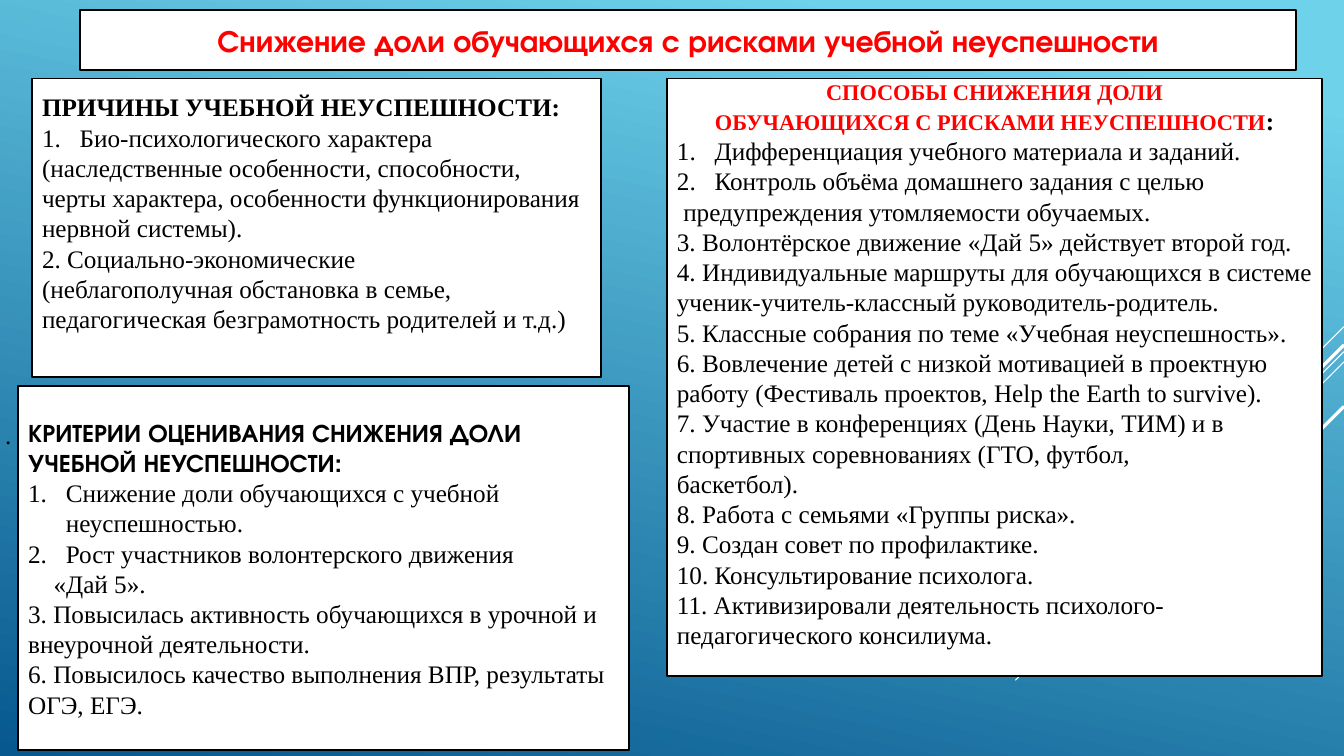
import pptx
import pptx.dml.color
import pptx.enum.shapes
import pptx.enum.text
import pptx.oxml
import pptx.util
from dataclasses import dataclass
from lxml import etree
from pptx.oxml.ns import qn

Cm = pptx.util.Cm
Pt = pptx.util.Pt
Align = pptx.enum.text.PP_ALIGN
Anchor = pptx.enum.text.MSO_ANCHOR


@dataclass(frozen=True)
class Theme:
    sky: str = "6ED2EB"
    sea: str = "06588E"
    paper: str = "FFFFFF"
    ink: str = "000000"
    accent: str = "FF0000"
    title_size: float = 22
    body_size: float = 18
    small_size: float = 16
    line_pitch: float = 21.6
    border: float = 1.25
    serif: str = "Times New Roman"
    display: str = "TeX Gyre Adventor"


THEME = Theme()
SLIDE_WIDTH, SLIDE_HEIGHT = 33.87, 19.05
LIST_INDENT = 0.95

# Start height at the right edge, run to the lower left, line width
RAYS = [(8.23, 2.54, 0.75), (8.86, 8.28, 0.75), (9.12, 5.27, 0.75),
        (8.69, 4.85, 2.25), (10.24, 3.53, 2.25)]

NUMBERED = {"numbered": True}
CAUSES = [
    ("Био-психологического характера", NUMBERED),
    ("(наследственные особенности, способности,", {}),
    ("черты характера, особенности функционирования", {}),
    ("нервной системы).", {}),
    ("2. Социально-экономические", {}),
    ("(неблагополучная обстановка в семье,", {}),
    ("педагогическая безграмотность родителей и т.д.)", {}),
]
METHODS = [
    ("Дифференциация учебного материала и заданий.", NUMBERED),
    ("Контроль объёма домашнего задания с целью", NUMBERED),
    ("предупреждения утомляемости обучаемых.", {"indent": 0.16}),
    ("3. Волонтёрское движение «Дай 5» действует второй год.", {}),
    ("4. Индивидуальные маршруты для обучающихся в системе "
     "ученик-учитель-классный руководитель-родитель.", {}),
    ("5. Классные собрания по теме «Учебная неуспешность».", {}),
    ("6. Вовлечение детей с низкой мотивацией в проектную", {}),
    ("работу (Фестиваль проектов, Help the Earth to survive).", {}),
    ("7. Участие в конференциях (День Науки, ТИМ) и в", {}),
    ("спортивных соревнованиях (ГТО, футбол,", {}),
    ("баскетбол).", {}),
    ("8. Работа с семьями «Группы риска».", {}),
    ("9. Создан совет по профилактике.", {}),
    ("10. Консультирование психолога.", {}),
    ("11. Активизировали деятельность психолого-педагогического консилиума.", {}),
]
CRITERIA = [
    ("Снижение доли обучающихся с учебной неуспешностью.", NUMBERED),
    ("Рост участников волонтерского движения", NUMBERED),
    ("«Дай 5».", {"indent": 0.64}),
    ("3. Повысилась активность обучающихся в урочной и внеурочной деятельности.", {}),
    ("6. Повысилось качество выполнения ВПР, результаты ОГЭ, ЕГЭ.", {}),
]


def rgb(value):
    return pptx.dml.color.RGBColor.from_string(value)


def write(box, text, size=THEME.body_size, font=THEME.serif, color=THEME.ink,
          bold=False, align=Align.LEFT, numbered=False, indent=0, join=False):
    """Add a paragraph to the box, or with join extend its last one."""
    frame = box.text_frame
    para = frame.paragraphs[-1]
    if para.runs and not join:
        para = frame.add_paragraph()
    span = para.add_run()
    span.text = text
    span.font.size = Pt(size)
    span.font.name = font
    span.font.bold = bold
    span.font.color.rgb = rgb(color)
    if join:
        return
    para.alignment = align
    para.line_spacing = Pt(max(THEME.line_pitch, size * 1.2))
    properties = para._p.get_or_add_pPr()
    if numbered:
        properties.set("marL", str(Cm(LIST_INDENT)))
        properties.set("indent", str(-Cm(LIST_INDENT)))
        etree.SubElement(properties, qn("a:buFont")).set("typeface", font)
        etree.SubElement(properties, qn("a:buAutoNum")).set("type", "arabicPeriod")
    elif indent:
        properties.set("marL", str(Cm(indent)))


def write_all(box, lines, **common):
    for text, own in lines:
        write(box, text, **common, **own)


def add_panel(slide, left, top, width, height, inset_top=0.13, inset_bottom=0.13):
    panel = slide.shapes.add_shape(pptx.enum.shapes.MSO_SHAPE.RECTANGLE,
                                   Cm(left), Cm(top), Cm(width), Cm(height))
    panel.shadow.inherit = False
    panel.fill.solid()
    panel.fill.fore_color.rgb = rgb(THEME.paper)
    panel.line.color.rgb = rgb(THEME.ink)
    panel.line.width = Pt(THEME.border)
    frame = panel.text_frame
    frame.word_wrap = True
    frame.vertical_anchor = Anchor.MIDDLE
    frame.margin_top, frame.margin_bottom = Cm(inset_top), Cm(inset_bottom)
    return panel


def add_ray(slide, top, run, width):
    """Draw a 45 degree line from the right edge down to the left."""
    ray = slide.shapes.add_connector(
        pptx.enum.shapes.MSO_CONNECTOR.STRAIGHT,
        Cm(SLIDE_WIDTH), Cm(top), Cm(SLIDE_WIDTH - run), Cm(top + run))
    ray.line.color.rgb = rgb(THEME.paper)
    ray.line.width = Pt(width)
    etree.SubElement(ray._element.spPr, qn("a:effectLst"))


def paint_background(slide):
    fill = slide.background.fill
    fill.gradient()
    fill.gradient_angle = 258
    stops = [(0.1, THEME.sky), (1, THEME.sea)]
    for stop, (position, color) in zip(fill.gradient_stops, stops):
        stop.position = position
        stop.color.rgb = rgb(color)


def main():
    deck = pptx.Presentation()
    deck.slide_width, deck.slide_height = Cm(SLIDE_WIDTH), Cm(SLIDE_HEIGHT)
    slide = deck.slides.add_slide(deck.slide_layouts[6])
    paint_background(slide)
    for ray in RAYS:
        add_ray(slide, *ray)

    title = add_panel(slide, 2.01, 0.25, 30.66, 1.52)
    write(title, "Снижение доли обучающихся с рисками учебной неуспешности",
          size=THEME.title_size, font=THEME.display, color=THEME.accent,
          bold=True, align=Align.CENTER)

    dot = slide.shapes.add_textbox(Cm(0), Cm(10.44), Cm(0.46), Cm(1))
    dot.text_frame.word_wrap = True
    dot.text_frame.margin_left = dot.text_frame.margin_right = Cm(0.13)
    write(dot, ".")

    causes = add_panel(slide, 0.81, 1.98, 14.33, 7.52, 0, 0.76)
    write(causes, "ПРИЧИНЫ УЧЕБНОЙ НЕУСПЕШНОСТИ:", bold=True, align=Align.JUSTIFY)
    write_all(causes, CAUSES, align=Align.JUSTIFY)

    methods = add_panel(slide, 16.81, 1.98, 16.51, 15.06, 0, 0.76)
    for heading in ("СПОСОБЫ СНИЖЕНИЯ ДОЛИ", "ОБУЧАЮЩИХСЯ С РИСКАМИ НЕУСПЕШНОСТИ"):
        write(methods, heading, size=THEME.small_size, color=THEME.accent,
              bold=True, align=Align.CENTER)
    write(methods, ":", bold=True, join=True)
    write_all(methods, METHODS)

    criteria = add_panel(slide, 0.46, 9.73, 15.39, 9.17)
    for heading in ("КРИТЕРИИ ОЦЕНИВАНИЯ СНИЖЕНИЯ ДОЛИ", "УЧЕБНОЙ НЕУСПЕШНОСТИ:"):
        write(criteria, heading, font=THEME.display, bold=True)
    write_all(criteria, CRITERIA)

    deck.save("out.pptx")


if __name__ == "__main__":
    main()
